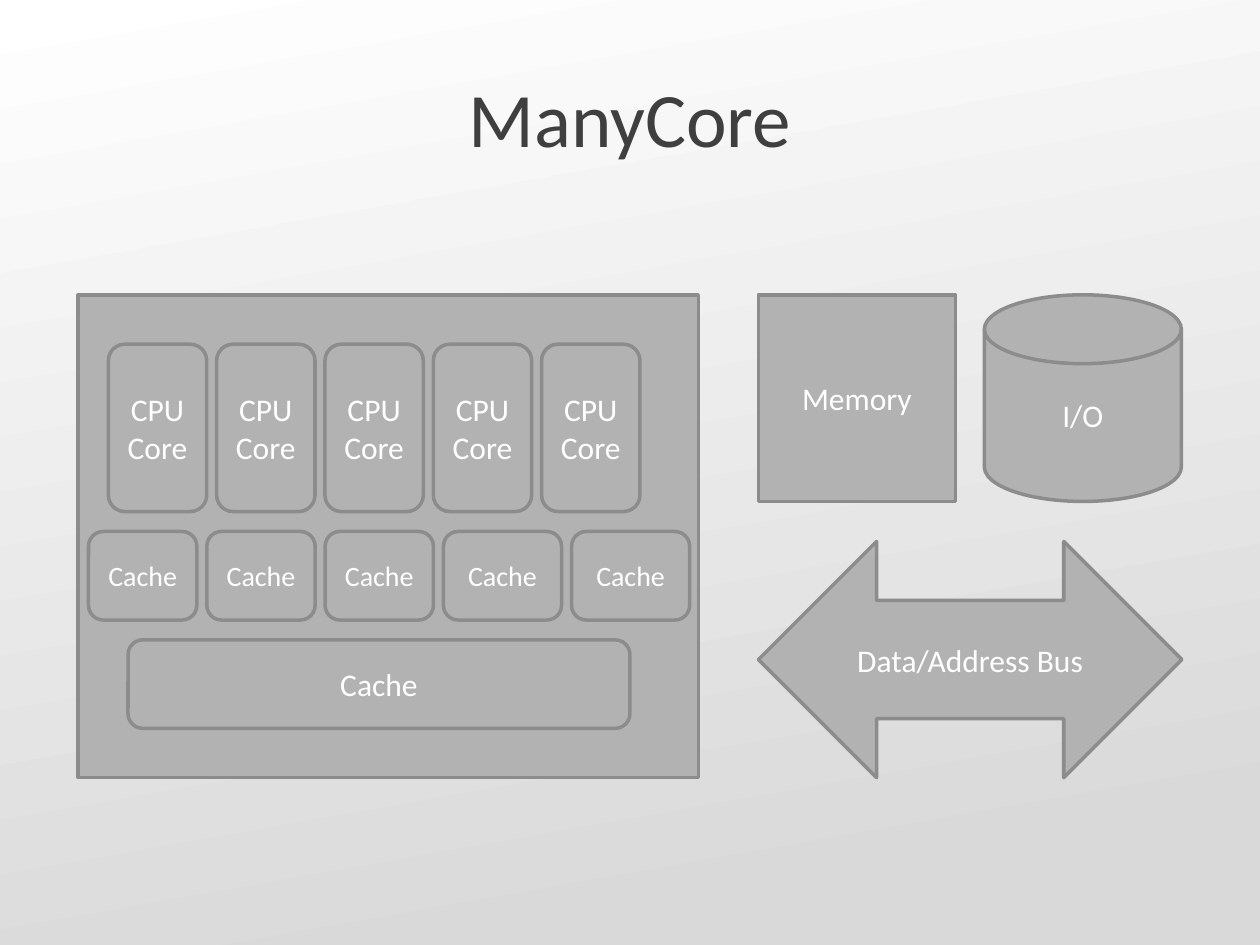
"""Builds a slide that shows the parts of a many-core computer."""
import pptx
import pptx.dml.color
import pptx.enum.shapes
import pptx.enum.text
import pptx.util

Pt = pptx.util.Pt
RGBColor = pptx.dml.color.RGBColor
SHAPE = pptx.enum.shapes.MSO_SHAPE

TITLE_COLOR = RGBColor(0x3F, 0x3F, 0x3F)
FILL = RGBColor(0xB2, 0xB2, 0xB2)
OUTLINE = RGBColor(0x8C, 0x8C, 0x8C)
WHITE = RGBColor(0xFF, 0xFF, 0xFF)
BACKGROUND = [(0.11, RGBColor(0xD9, 0xD9, 0xD9)), (1, WHITE)]

TITLE = "ManyCore"
PARTS = [
    ("", SHAPE.RECTANGLE, (44.6, 168.5, 354.5, 275.8)),
    ("Data/Address Bus", SHAPE.LEFT_RIGHT_ARROW, (433.4, 309.4, 242, 135)),
    ("Memory", SHAPE.RECTANGLE, (433.4, 168.5, 112.6, 118.1)),
    ("I/O", SHAPE.FLOWCHART_MAGNETIC_DISK, (562.5, 168.5, 112.6, 118.1)),
    ("Cache", SHAPE.ROUNDED_RECTANGLE, (73.2, 365.6, 286.8, 50.6)),
]
ROWS = [
    {"text": "CPU Core", "size": 18, "left": 61.9, "top": 196.7, "height": 95.6,
     "widths": [56.2] * 5},
    {"text": "Cache", "size": 16, "left": 50.6, "top": 303.7, "height": 50.6,
     "widths": [61.9] * 3 + [67.5] * 2},
]
GAP = 5.7


def write(box, text, size=18, color=WHITE):
    frame = box.text_frame
    frame.word_wrap = True
    frame.vertical_anchor = pptx.enum.text.MSO_ANCHOR.MIDDLE
    para = frame.paragraphs[0]
    para.alignment = pptx.enum.text.PP_ALIGN.CENTER
    span = para.add_run()
    span.text = text
    span.font.name = "Calibri"
    span.font.size = Pt(size)
    span.font.color.rgb = color


def place(box, bounds):
    box.left, box.top, box.width, box.height = map(Pt, bounds)


def add_part(page, text, kind, bounds, size=18):
    box = page.shapes.add_shape(kind, *map(Pt, bounds))
    box.shadow.inherit = False
    box.fill.solid()
    box.fill.fore_color.rgb = FILL
    box.line.color.rgb = OUTLINE
    box.line.width = Pt(2)
    if text:
        write(box, text, size=size)


def add_row(page, row):
    left = row["left"]
    for width in row["widths"]:
        bounds = (left, row["top"], width, row["height"])
        add_part(page, row["text"], SHAPE.ROUNDED_RECTANGLE, bounds, size=row["size"])
        left += width + GAP


def paint_background(page):
    fill = page.background.fill
    fill.gradient()
    fill.gradient_angle = 100
    for stop, (position, color) in zip(fill.gradient_stops, BACKGROUND):
        stop.position = position
        stop.color.rgb = color


def main():
    deck = pptx.Presentation()
    deck.slide_width, deck.slide_height = Pt(720), Pt(540)
    page = deck.slides.add_slide(deck.slide_layouts[5])
    paint_background(page)
    place(page.shapes.title, (36, 21.6, 648, 90))
    write(page.shapes.title, TITLE, size=44, color=TITLE_COLOR)
    for text, kind, bounds in PARTS:
        add_part(page, text, kind, bounds)
    for row in ROWS:
        add_row(page, row)
    deck.save("out.pptx")


if __name__ == "__main__":
    main()
